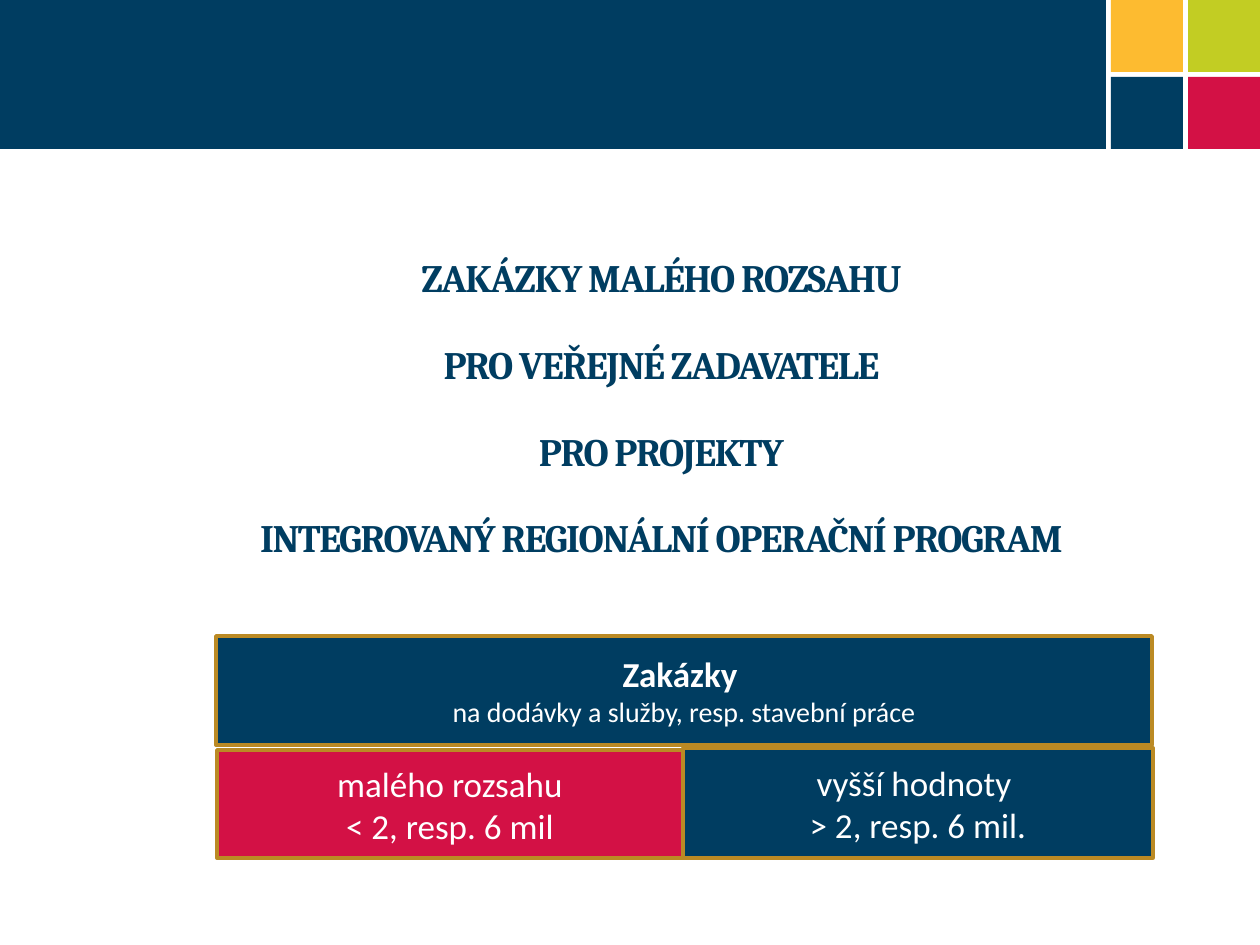
import pptx
import pptx.dml.color
import pptx.enum.shapes
import pptx.enum.text
import pptx.util

EMU_PER_PX = 914400 / 126
COLORS = {
    "navy": "003D61",
    "crimson": "D31145",
    "lime": "C2CD23",
    "amber": "FDBB30",
    "gold": "BB8A24",
    "white": "FFFFFF",
}


def px(length):
    return pptx.util.Emu(round(length * EMU_PER_PX))


def add_box(left, top, width, height, color):
    shape = slide.shapes.add_shape(
        pptx.enum.shapes.MSO_SHAPE.RECTANGLE, px(left), px(top), px(width), px(height))
    shape.shadow.inherit = False
    shape.fill.solid()
    shape.fill.fore_color.rgb = pptx.dml.color.RGBColor.from_string(COLORS[color])
    shape.line.fill.background()
    return shape


presentation = pptx.Presentation()
presentation.slide_width = px(1260)
presentation.slide_height = px(945)
slide = presentation.slides.add_slide(presentation.slide_layouts[5])

# Header band and its four squares
add_box(0, 0, 1106, 149, "navy")
for index, color in enumerate(["amber", "lime", "navy", "crimson"]):
    row, column = divmod(index, 2)
    add_box(1111 + 77 * column, 77 * row, 72, 72, color)

# Title lines
title = slide.shapes.title
title.left, title.top, title.width, title.height = px(170), px(255), px(983), px(328)
frame = title.text_frame
frame.word_wrap = True
frame.auto_size = pptx.enum.text.MSO_AUTO_SIZE.NONE
frame.vertical_anchor = pptx.enum.text.MSO_ANCHOR.TOP
frame.margin_top = px(10)
frame.text = "\n".join([
    "ZAKÁZKY MALÉHO ROZSAHU",
    "PRO VEŘEJNÉ ZADAVATELE",
    "PRO PROJEKTY",
    "INTEGROVANÝ REGIONÁLNÍ OPERAČNÍ PROGRAM",
])
for index, paragraph in enumerate(frame.paragraphs):
    paragraph.alignment = pptx.enum.text.PP_ALIGN.CENTER
    paragraph.line_spacing = 0.75
    paragraph.space_before = pptx.util.Pt(29.5 if index else 0)
    paragraph.font.name = "Cambria"
    paragraph.font.size = pptx.util.Pt(22.2)
    paragraph.font.bold = True
    paragraph.font.color.rgb = pptx.dml.color.RGBColor.from_string(COLORS["navy"])
    for run in paragraph.runs:
        run.font._element.set("spc", "-80")

# Contract boxes: position, fill, then (text, size, bold) for each line
boxes = [
    ((683, 748, 470, 110), "navy",
     [("vyšší hodnoty ", 20, False), ("> 2, resp. 6 mil.", 20, False)]),
    ((217, 750, 466, 108), "crimson",
     [("malého rozsahu", 20, False), ("< 2, resp. 6 mil", 20, False)]),
    ((216, 636, 936, 109), "navy",
     [("Zakázky ", 20, True), ("na dodávky a služby, resp. stavební práce", 16, False)]),
]
for position, color, lines in boxes:
    shape = add_box(*position, color)
    shape.line.color.rgb = pptx.dml.color.RGBColor.from_string(COLORS["gold"])
    shape.line.width = pptx.util.Pt(2)
    frame = shape.text_frame
    frame.word_wrap = True
    frame.vertical_anchor = pptx.enum.text.MSO_ANCHOR.MIDDLE
    frame.text = "\n".join(text for text, size, bold in lines)
    for paragraph, (text, size, bold) in zip(frame.paragraphs, lines):
        paragraph.alignment = pptx.enum.text.PP_ALIGN.CENTER
        paragraph.font.name = "Calibri"
        paragraph.font.size = pptx.util.Pt(size)
        paragraph.font.bold = bold
        paragraph.font.color.rgb = pptx.dml.color.RGBColor.from_string(COLORS["white"])

presentation.save("out.pptx")
